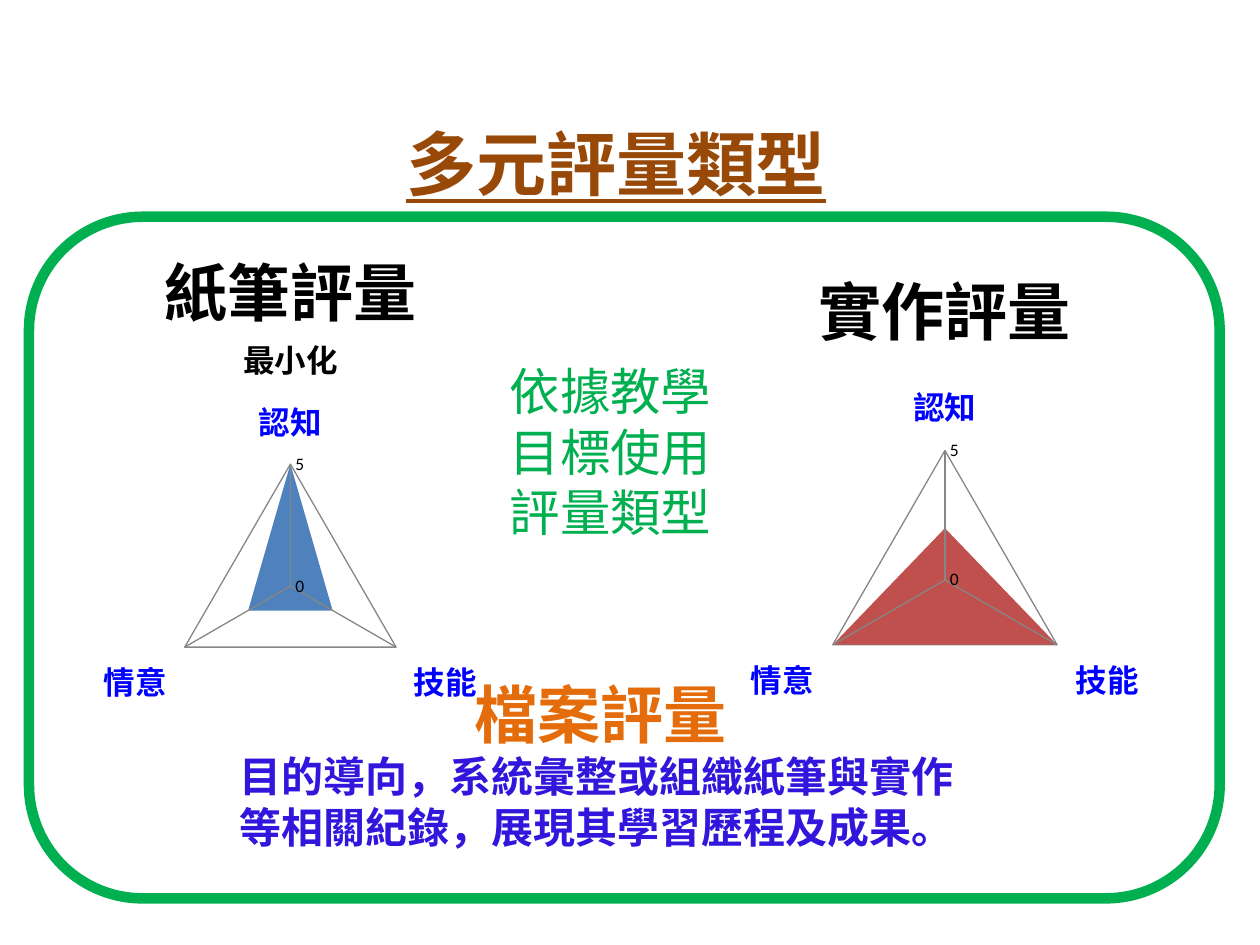
from pptx import Presentation
from pptx.chart.data import CategoryChartData
from pptx.dml.color import RGBColor
from pptx.enum.chart import XL_CHART_TYPE as ChartType, XL_TICK_MARK as Tick
from pptx.enum.shapes import MSO_SHAPE as Shape
from pptx.enum.text import MSO_ANCHOR as Anchor, PP_ALIGN as Align
from pptx.util import Inches, Pt

# Content
TITLE = "多元評量類型"
GUIDANCE = "依據教學目標使用評量類型"
PORTFOLIO = "檔案評量"
PORTFOLIO_NOTE = "目的導向，系統彙整或組織紙筆與實作等相關紀錄，展現其學習歷程及成果。"
DOMAINS = ["認知", "技能", "情意"]
CHARTS = [
    {"title": ["紙筆評量", "最小化"], "values": (5, 2, 2), "color": "4F81BD",
     "place": (0, 1.75, 4.61, 3.95)},
    {"title": ["實作評量"], "values": (2, 5, 5), "color": "C0504D",
     "place": (5.31, 1.8, 4.38, 3.91)},
]

THEME = {
    "latin": "Calibri", "cjk": "Noto Sans CJK SC",
    "black": "000000", "brown": "984807", "green": "00B050", "orange": "E46C0A",
    "violet": "3216DC", "blue": "0000FF", "grid": "868686",
    "title": 40, "heading": 36, "guidance": 28.8, "note": 24, "label": 18, "tick": 10,
}


def set_font(font, size, color, bold=False, underline=False, name=THEME["latin"]):
    font.size = Pt(size)
    font.color.rgb = RGBColor.from_string(color)
    font.bold = bold
    font.underline = underline
    font.name = name


def write(frame, text, first=True, align=Align.CENTER, **style):
    para = frame.paragraphs[0] if first else frame.add_paragraph()
    para.alignment = align
    span = para.add_run()
    span.text = text
    set_font(span.font, **style)


def add_box(page, place, anchor=Anchor.TOP):
    frame = page.shapes.add_textbox(*map(Inches, place)).text_frame
    frame.word_wrap = True
    frame.vertical_anchor = anchor
    return frame


def add_radar(page, title, values, color, place):
    data = CategoryChartData()
    data.categories = DOMAINS
    data.add_series("Series 1", values)
    chart = page.shapes.add_chart(
        ChartType.RADAR_FILLED, *map(Inches, place), data).chart
    chart.has_legend = False
    set_font(chart.font, THEME["tick"], THEME["black"])

    # Chart title: a large heading, then an optional smaller line
    chart.has_title = True
    for index, line in enumerate(title):
        size = THEME["label"] if index else THEME["heading"]
        write(chart.chart_title.text_frame, line, first=index == 0,
              size=size, color=THEME["black"], bold=True)
    chart.chart_title.include_in_layout = False

    # Axes
    grid = RGBColor.from_string(THEME["grid"])
    domains, scores = chart.category_axis, chart.value_axis
    for axis in (domains, scores):
        axis.has_major_gridlines = True
        axis.major_gridlines.format.line.color.rgb = grid
        axis.major_tick_mark = axis.minor_tick_mark = Tick.NONE
    set_font(domains.tick_labels.font, THEME["label"], THEME["blue"], bold=True)
    domains.format.line.fill.background()
    scores.format.line.color.rgb = grid
    scores.minimum_scale, scores.maximum_scale, scores.major_unit = 0, 5, 5

    plot = chart.plots[0]
    plot.vary_by_categories = False
    fill = plot.series[0].format.fill
    fill.solid()
    fill.fore_color.rgb = RGBColor.from_string(color)


def main():
    deck = Presentation()
    deck.slide_width, deck.slide_height = Inches(10), Inches(7.5)
    page = deck.slides.add_slide(deck.slide_layouts[6])

    # Green frame
    border = page.shapes.add_shape(
        Shape.ROUNDED_RECTANGLE, *map(Inches, (0.23, 1.72, 9.45, 5.41)))
    border.shadow.inherit = False
    border.fill.background()
    border.line.color.rgb = RGBColor.from_string(THEME["green"])
    border.line.width = Pt(6)

    # Portfolio assessment
    frame = add_box(page, (1.8, 5.31, 5.94, 1.51))
    write(frame, PORTFOLIO, size=THEME["heading"], color=THEME["orange"], bold=True)
    write(frame, PORTFOLIO_NOTE, first=False, align=Align.LEFT,
          size=THEME["note"], color=THEME["violet"], bold=True)

    # Paper and practical assessment
    for chart in CHARTS:
        add_radar(page, **chart)

    # Slide title and central guidance
    write(add_box(page, (0.39, 0.78, 9, 1.02), Anchor.MIDDLE), TITLE,
          size=THEME["title"], color=THEME["brown"], bold=True, underline=True,
          name=THEME["cjk"])
    write(add_box(page, (3.75, 2.81, 2.19, 1.48)), GUIDANCE,
          size=THEME["guidance"], color=THEME["green"], name=THEME["cjk"])

    deck.save("out.pptx")


if __name__ == "__main__":
    main()
